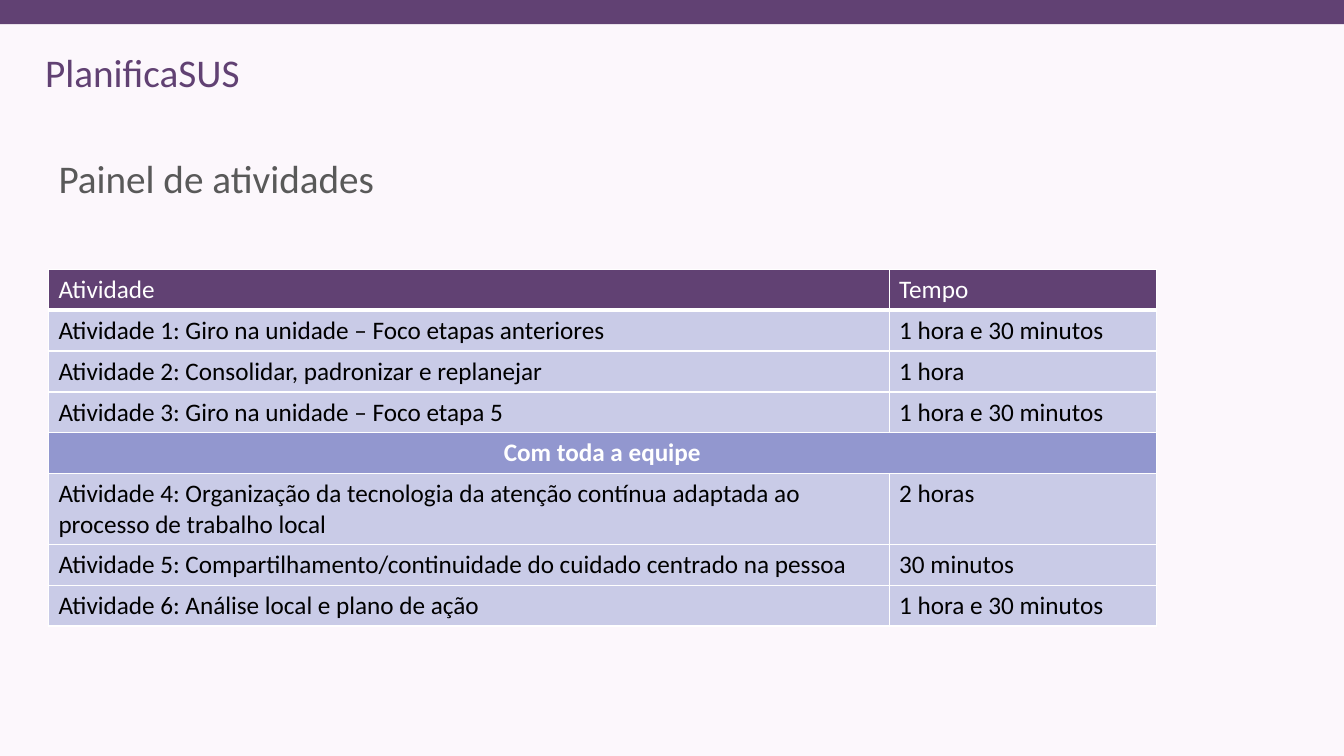
from lxml import etree
from pptx import Presentation
from pptx.dml import color
from pptx.enum import shapes, text
from pptx.oxml import ns
from pptx.util import Pt

PURPLE, GREY, WHITE, BLACK = "614173", "595959", "FFFFFF", "000000"
LILAC, VIOLET, BACKGROUND = "C9CBE7", "9297CF", "FCF7FC"


def paint(fill, colour):
    fill.solid()
    fill.fore_color.rgb = color.RGBColor.from_string(colour)


def write(frame, words, size=18, colour=BLACK, bold=False, align="LEFT", spacing=1.0):
    para = frame.paragraphs[0]
    para.alignment = getattr(text.PP_ALIGN, align)
    para.line_spacing = spacing
    span = para.add_run()
    span.text = words
    span.font.name = "Calibri"
    span.font.size = Pt(size)
    span.font.bold = bold
    paint(span.font.fill, colour)


deck = Presentation()
deck.slide_width, deck.slide_height = Pt(960), Pt(540)
page = deck.slides.add_slide(deck.slide_layouts[5])
paint(page.background.fill, BACKGROUND)

# Top band and programme name
band = page.shapes.add_shape(shapes.MSO_SHAPE.RECTANGLE, 0, 0, Pt(960), Pt(17.3))
band.shadow.inherit = False
paint(band.fill, PURPLE)
band.line.fill.background()

programme = page.shapes.add_textbox(Pt(25.2), Pt(31), Pt(154.8), Pt(41))
programme.text_frame.word_wrap = False
write(programme.text_frame, "PlanificaSUS", size=28, colour=PURPLE)

# Title
title = page.shapes.title
title.left, title.top, title.width, title.height = Pt(34.6), Pt(77), Pt(791.3), Pt(104.4)
title.text_frame.vertical_anchor = text.MSO_ANCHOR.MIDDLE
title.text_frame.word_wrap = True
write(title.text_frame, "Painel de atividades", size=28, colour=GREY, spacing=0.9)

# Activity table; a row with one entry spans both columns
rows = [
    ("Atividade", "Tempo"),
    ("Atividade 1: Giro na unidade – Foco etapas anteriores", "1 hora e 30 minutos"),
    ("Atividade 2: Consolidar, padronizar e replanejar", "1 hora"),
    ("Atividade 3: Giro na unidade – Foco etapa 5", "1 hora e 30 minutos"),
    ("Com toda a equipe",),
    ("Atividade 4: Organização da tecnologia da atenção contínua adaptada ao "
     "processo de trabalho local", "2 horas"),
    ("Atividade 5: Compartilhamento/continuidade do cuidado centrado na pessoa",
     "30 minutos"),
    ("Atividade 6: Análise local e plano de ação", "1 hora e 30 minutos"),
]
row_height = 29.2
table = page.shapes.add_table(len(rows), 2, Pt(34.6), Pt(192.4), Pt(791.3),
                              Pt(row_height * len(rows))).table
table.horz_banding = False
table.columns[0].width, table.columns[1].width = Pt(600.5), Pt(190.8)

for row_index, entries in enumerate(rows):
    table.rows[row_index].height = Pt(row_height)
    header, section = row_index == 0, len(entries) == 1
    if section:
        table.cell(row_index, 0).merge(table.cell(row_index, 1))
    for column_index, words in enumerate(entries):
        cell = table.cell(row_index, column_index)
        properties = cell._tc.get_or_add_tcPr()
        for side in "LRTB":
            weight = 3 if header and side == "B" else 1
            border = etree.SubElement(properties, ns.qn(f"a:ln{side}"), w=str(Pt(weight)))
            solid = etree.SubElement(border, ns.qn("a:solidFill"))
            etree.SubElement(solid, ns.qn("a:srgbClr"), val=WHITE)
        paint(cell.fill, PURPLE if header else VIOLET if section else LILAC)
        write(cell.text_frame, words, colour=WHITE if header or section else BLACK,
              bold=section, align="CENTER" if section else "LEFT")

deck.save("out.pptx")
